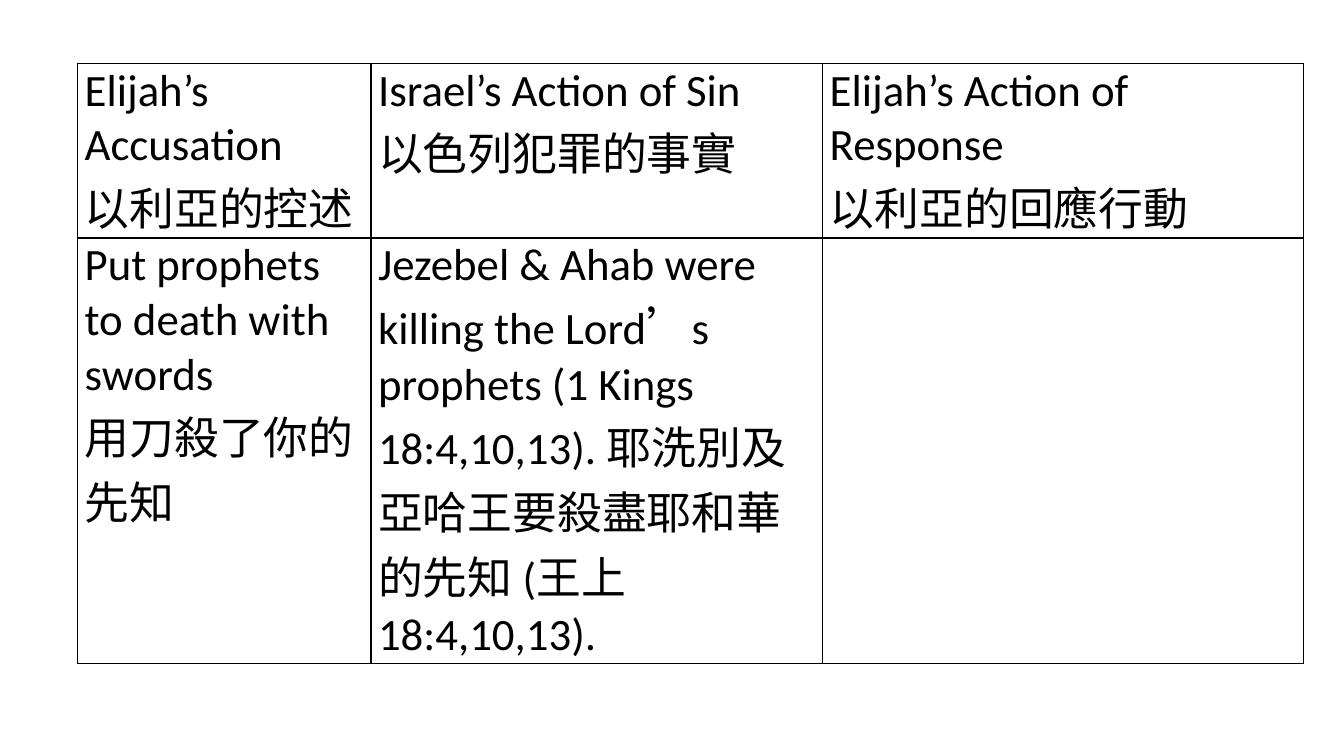
from lxml import etree
from pptx import Presentation
from pptx import util as u
from pptx.dml.color import RGBColor
from pptx.oxml.ns import qn

COLORS = {"ink": "000000"}
FONT = "Calibri"
COLS = [2.91, 4.48, 4.77]
ROWS = [1.73, 4.22]
CELLS = [
    [
        ["Elijah’s Accusation", "以利亞的控述"],
        ["Israel’s Action of Sin", "以色列犯罪的事實"],
        ["Elijah’s Action of Response", "以利亞的回應行動"],
    ],
    [
        ["Put prophets to death with swords", "用刀殺了你的先知"],
        ["Jezebel & Ahab were killing the Lord’s prophets (1 Kings 18:4,10,13). "
         "耶洗別及亞哈王要殺盡耶和華的先知 (王上18:4,10,13)."],
        [],
    ],
]


def add_borders(cell):
    tcPr = cell._tc.get_or_add_tcPr()
    for i, side in enumerate(("lnL", "lnR", "lnT", "lnB")):
        ln = etree.Element(qn(f"a:{side}"), w=str(u.Pt(1)))
        fill = etree.SubElement(ln, qn("a:solidFill"))
        etree.SubElement(fill, qn("a:srgbClr"), val=COLORS["ink"])
        tcPr.insert(i, ln)


prs = Presentation()
prs.slide_width, prs.slide_height = u.Inches(13.33), u.Inches(7.5)
s = prs.slides.add_slide(prs.slide_layouts[6])

tbl = s.shapes.add_table(
    len(ROWS), len(COLS), u.Inches(0.77), u.Inches(0.63),
    u.Inches(sum(COLS)), u.Inches(sum(ROWS)),
).table
tbl.first_row = tbl.horz_banding = False
for col, width in zip(tbl.columns, COLS):
    col.width = u.Inches(width)
for row, height, row_cells in zip(tbl.rows, ROWS, CELLS):
    row.height = u.Inches(height)
    for cell, lines in zip(row.cells, row_cells):
        cell.fill.background()
        add_borders(cell)
        cell.margin_left = cell.margin_right = u.Inches(0.07)
        cell.margin_top = cell.margin_bottom = 0
        tf = cell.text_frame
        tf.text = "\n".join(lines)
        for p in tf.paragraphs:
            for r in p.runs:
                r.font.name, r.font.size = FONT, u.Pt(32)
                r.font.color.rgb = RGBColor.from_string(COLORS["ink"])

prs.save("out.pptx")
